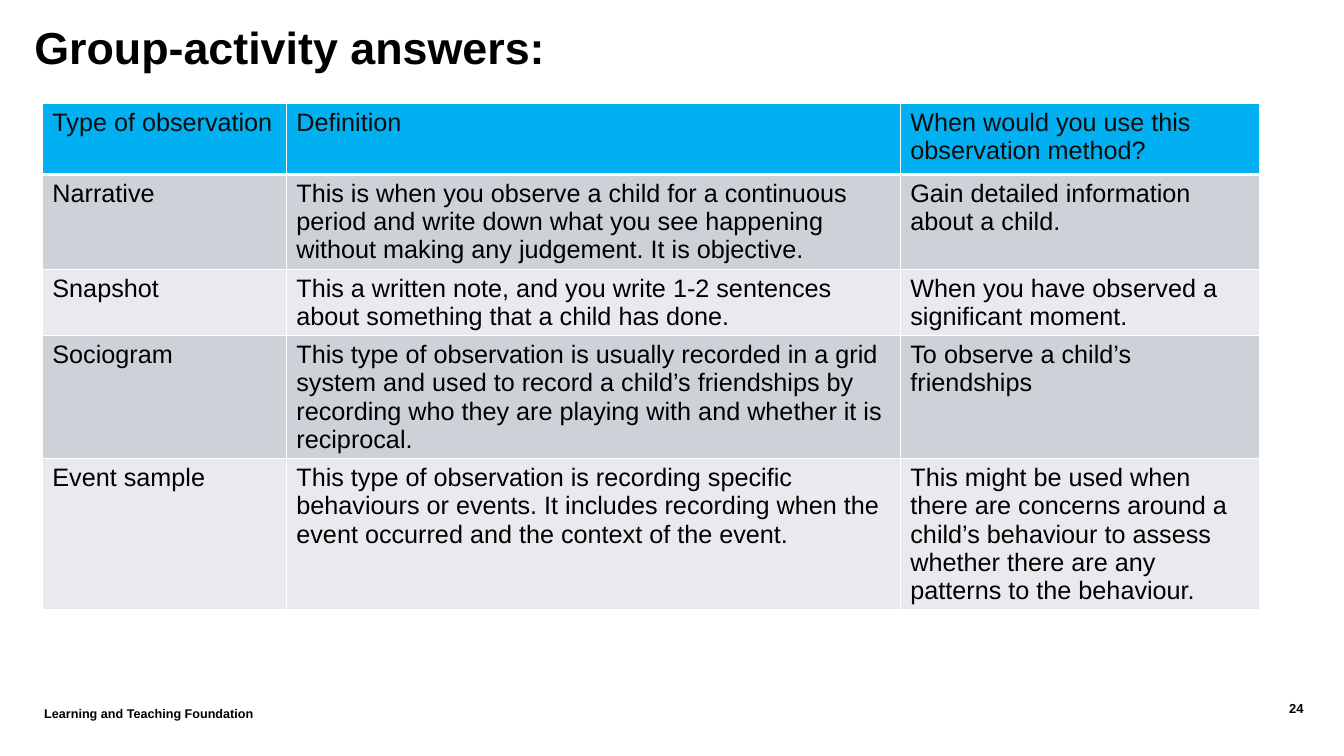
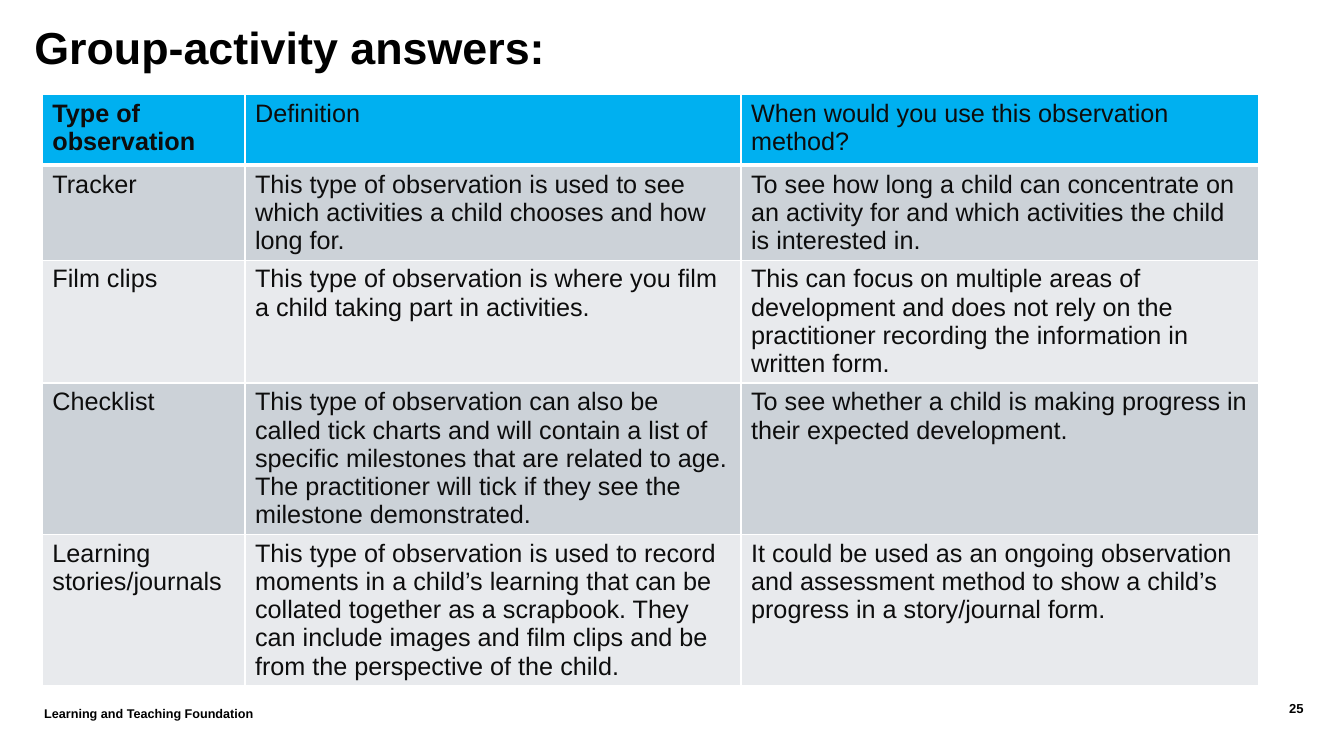
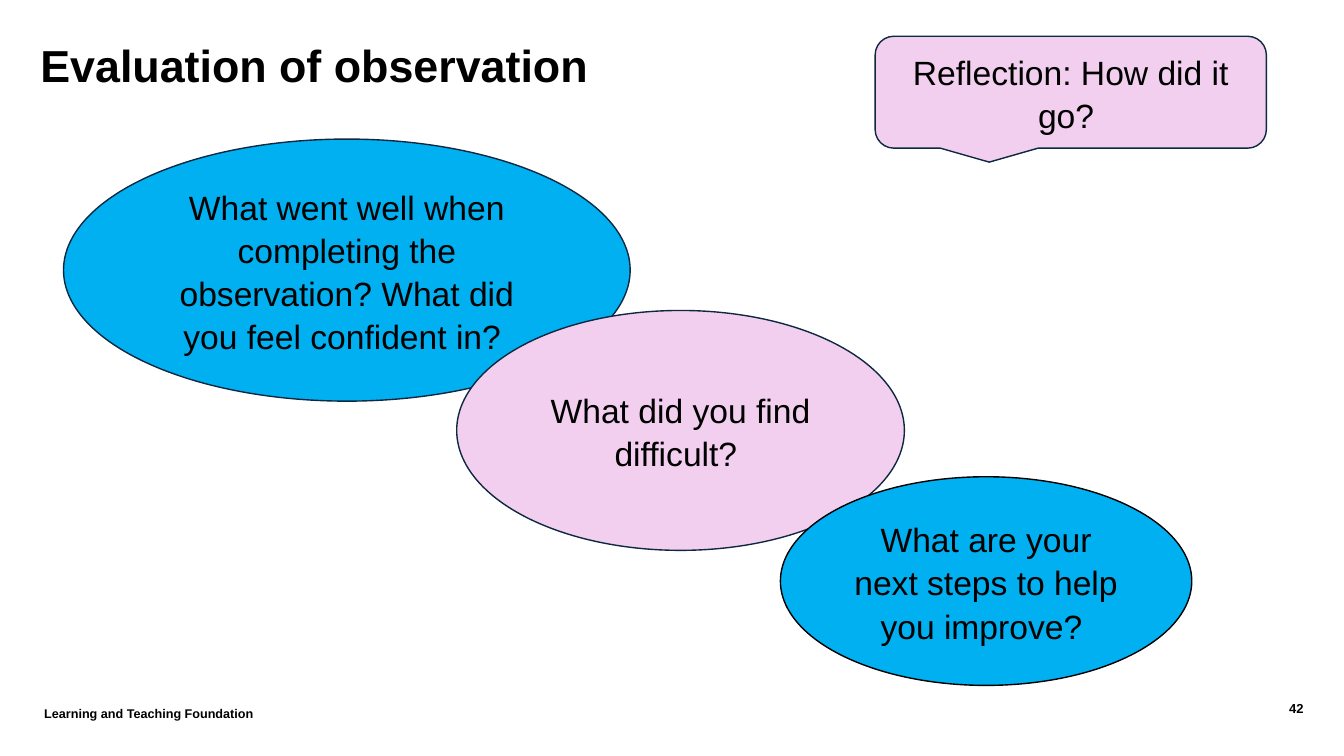
"""Build three slides on child observation methods and their evaluation."""
import pptx
import pptx.util
import pptx.dml.color
import pptx.enum.shapes
import pptx.enum.text
import pptx.oxml
import pptx.oxml.ns

Inches = pptx.util.Inches
Pt = pptx.util.Pt
ALIGN = pptx.enum.text.PP_ALIGN
ANCHOR = pptx.enum.text.MSO_ANCHOR
SHAPE = pptx.enum.shapes.MSO_SHAPE

COLOURS = {
    "black": "000000", "ink": "0D0D0D", "white": "FFFFFF", "navy": "0E2841",
    "blue": "00B0F0", "pink": "F2CFEE", "grey": "CCD2D8", "pale": "E8EAED",
}
FORMATS = {
    "title": {"size": Pt(32), "bold": True},
    "footer": {"size": Pt(9), "bold": True},
    "number": {"size": Pt(9.3), "bold": True},
    "cell": {"size": Pt(18), "bold": False},
    "cell_bold": {"size": Pt(18), "bold": True},
    "bubble": {"size": Pt(24), "bold": False},
}
FOOTER = "Learning and Teaching Foundation"
HEADER_HEIGHT = 0.7
LINE_HEIGHT = 0.28
CELL_MARGINS = 0.1

TABLE_SLIDES = [
    {
        "number": 24, "top": 1.03, "columns": (2.42, 6.09, 3.56),
        "lines": (3, 2, 4, 5), "first_format": "cell", "text": "ink", "body": "black",
        "rows": [
            ("Type of observation", "Definition", "When would you use this observation method?"),
            ("Narrative",
             "This is when you observe a child for a continuous period and write down what you see "
             "happening without making any judgement. It is objective.",
             "Gain detailed information about a child."),
            ("Snapshot",
             "This a written note, and you write 1-2 sentences about something that a child has done.",
             "When you have observed a significant moment."),
            ("Sociogram",
             "This type of observation is usually recorded in a grid system and used to record a child’s "
             "friendships by recording who they are playing with and whether it is reciprocal.",
             "To observe a child’s friendships"),
            ("Event sample",
             "This type of observation is recording specific behaviours or events. It includes recording "
             "when the event occurred and the context of the event.",
             "This might be used when there are concerns around a child’s behaviour to assess whether "
             "there are any patterns to the behaviour."),
        ],
    },
    {
        "number": 25, "top": 0.94, "columns": (2.01, 4.92, 5.13),
        "lines": (3, 4, 5, 5), "first_format": "cell_bold", "text": "ink", "body": "ink",
        "rows": [
            ("Type of observation", "Definition", "When would you use this observation method?"),
            ("Tracker",
             "This type of observation is used to see which activities a child chooses and how long for.",
             "To see how long a child can concentrate on an activity for and which activities the "
             "child is interested in."),
            ("Film clips",
             "This type of observation is where you film a child taking part in activities.",
             "This can focus on multiple areas of development and does not rely on the practitioner "
             "recording the information in written form."),
            ("Checklist",
             "This type of observation can also be called tick charts and will contain a list of specific "
             "milestones that are related to age. The practitioner will tick if they see the milestone "
             "demonstrated.",
             "To see whether a child is making progress in their expected development."),
            ("Learning stories/journals",
             "This type of observation is used to record moments in a child’s learning that can be collated "
             "together as a scrapbook. They can include images and film clips and be from the perspective "
             "of the child.",
             "It could be used as an ongoing observation and assessment method to show a child’s progress "
             "in a story/journal form."),
        ],
    },
]
BUBBLES = [
    (SHAPE.ROUNDED_RECTANGULAR_CALLOUT, (8.68, 0.36, 3.88, 1.11), "pink", "navy",
     "Reflection: How did it go? "),
    (SHAPE.OVAL, (0.63, 1.38, 5.62, 2.6), "blue", "navy",
     "What went well when completing the observation? What did you feel confident in? "),
    (SHAPE.OVAL, (4.53, 3.08, 4.44, 2.38), "pink", "navy", "What did you find difficult? "),
    (SHAPE.OVAL, (7.74, 4.73, 4.08, 2.07), "blue", "black",
     "What are your next steps to help you improve? "),
]


def rgb(name):
    """Return the named colour."""
    return pptx.dml.color.RGBColor.from_string(COLOURS[name])


def write(frame, text, style, colour="black", align=ALIGN.LEFT, spacing=None):
    """Put one formatted paragraph in a text frame."""
    frame.text = text
    paragraph = frame.paragraphs[0]
    paragraph.alignment = align
    if spacing:
        paragraph.line_spacing = spacing
    font = paragraph.runs[0].font
    for name, value in {"name": "Arial", **FORMATS[style]}.items():
        setattr(font, name, value)
    font.color.rgb = rgb(colour)


def set_frame(frame, inset=None, anchor=ANCHOR.TOP):
    """Set wrapping, anchor and optional equal insets."""
    settings = {"word_wrap": True, "vertical_anchor": anchor,
                "auto_size": pptx.enum.text.MSO_AUTO_SIZE.NONE}
    if inset is not None:
        settings.update({f"margin_{side}": Inches(inset) for side in ("left", "top", "right", "bottom")})
    for name, value in settings.items():
        setattr(frame, name, value)


def add_label(slide, box, text, style, align=ALIGN.LEFT, inset=None):
    """Add a text box."""
    frame = slide.shapes.add_textbox(*map(Inches, box)).text_frame
    set_frame(frame, inset)
    write(frame, text, style, align=align)


def add_slide(presentation, title, left, top, number):
    """Add a slide with its title, page number and footer."""
    slide = presentation.slides.add_slide(presentation.slide_layouts[5])
    shape = slide.shapes.title
    for name, value in zip(("left", "top", "width", "height"), (left, top, 12.3, 1.02)):
        setattr(shape, name, Inches(value))
    set_frame(shape.text_frame, 0)
    write(shape.text_frame, title, "title", spacing=Pt(26.7))
    add_label(slide, (11.6, 6.95, 1.33, 0.4), str(number), "number", ALIGN.RIGHT, 0)
    add_label(slide, (0.34, 6.95, 11.21, 0.4), FOOTER, "footer")
    return slide


def set_borders(cell, bottom):
    """Draw white cell borders, with the given bottom width in points."""
    properties = cell._tc.get_or_add_tcPr()
    for side, width in (("L", 1), ("R", 1), ("T", 1), ("B", bottom)):
        properties.append(pptx.oxml.parse_xml(
            f'<a:ln{side} {pptx.oxml.ns.nsdecls("a")} w="{Pt(width)}"><a:solidFill>'
            f'<a:srgbClr val="{COLOURS["white"]}"/></a:solidFill></a:ln{side}>'))


def add_answers(slide, content):
    """Add the table of observation types."""
    heights = [HEADER_HEIGHT] + [CELL_MARGINS + LINE_HEIGHT * count for count in content["lines"]]
    columns, rows = content["columns"], content["rows"]
    table = slide.shapes.add_table(
        len(rows), len(columns), Inches(0.42), Inches(content["top"]),
        Inches(sum(columns)), Inches(sum(heights))).table
    table.first_row = table.horz_banding = False
    for column, width in zip(table.columns, columns):
        column.width = Inches(width)
    for row_index, texts in enumerate(rows):
        table.rows[row_index].height = Inches(heights[row_index])
        header = row_index == 0
        fill = "blue" if header else ("pale", "grey")[row_index % 2]
        for column_index, text in enumerate(texts):
            cell = table.cell(row_index, column_index)
            set_borders(cell, 3 if header else 1)
            cell.fill.solid()
            cell.fill.fore_color.rgb = rgb(fill)
            style = content["first_format"] if header and column_index == 0 else "cell"
            write(cell.text_frame, text, style, content["text" if header else "body"])


def add_bubble(slide, kind, box, fill, line, text):
    """Add an outlined shape with centred text."""
    shape = slide.shapes.add_shape(kind, *map(Inches, box))
    shape.shadow.inherit = False
    shape.fill.solid()
    shape.fill.fore_color.rgb = rgb(fill)
    shape.line.color.rgb = rgb(line)
    shape.line.width = Pt(1)
    set_frame(shape.text_frame, anchor=ANCHOR.MIDDLE)
    write(shape.text_frame, text, "bubble", align=ALIGN.CENTER, spacing=1.07)


def main():
    """Build and save the presentation."""
    presentation = pptx.Presentation()
    presentation.slide_width, presentation.slide_height = Inches(13.33), Inches(7.5)
    for content in TABLE_SLIDES:
        slide = add_slide(presentation, "Group-activity answers:", 0.34, 0.36, content["number"])
        add_answers(slide, content)
    slide = add_slide(presentation, "Evaluation of observation", 0.4, 0.54, 42)
    for bubble in BUBBLES:
        add_bubble(slide, *bubble)
    presentation.save("out.pptx")


if __name__ == "__main__":
    main()
